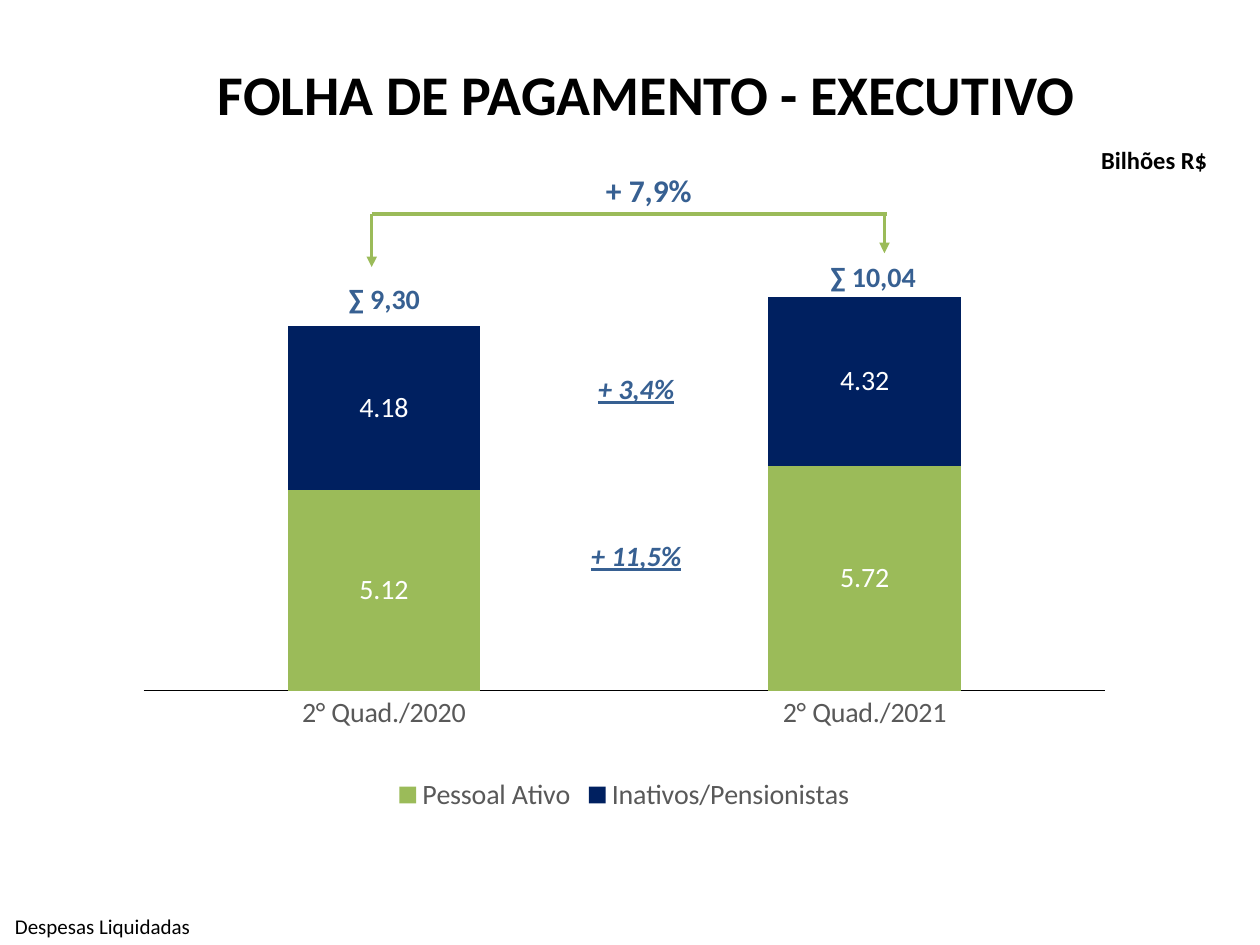
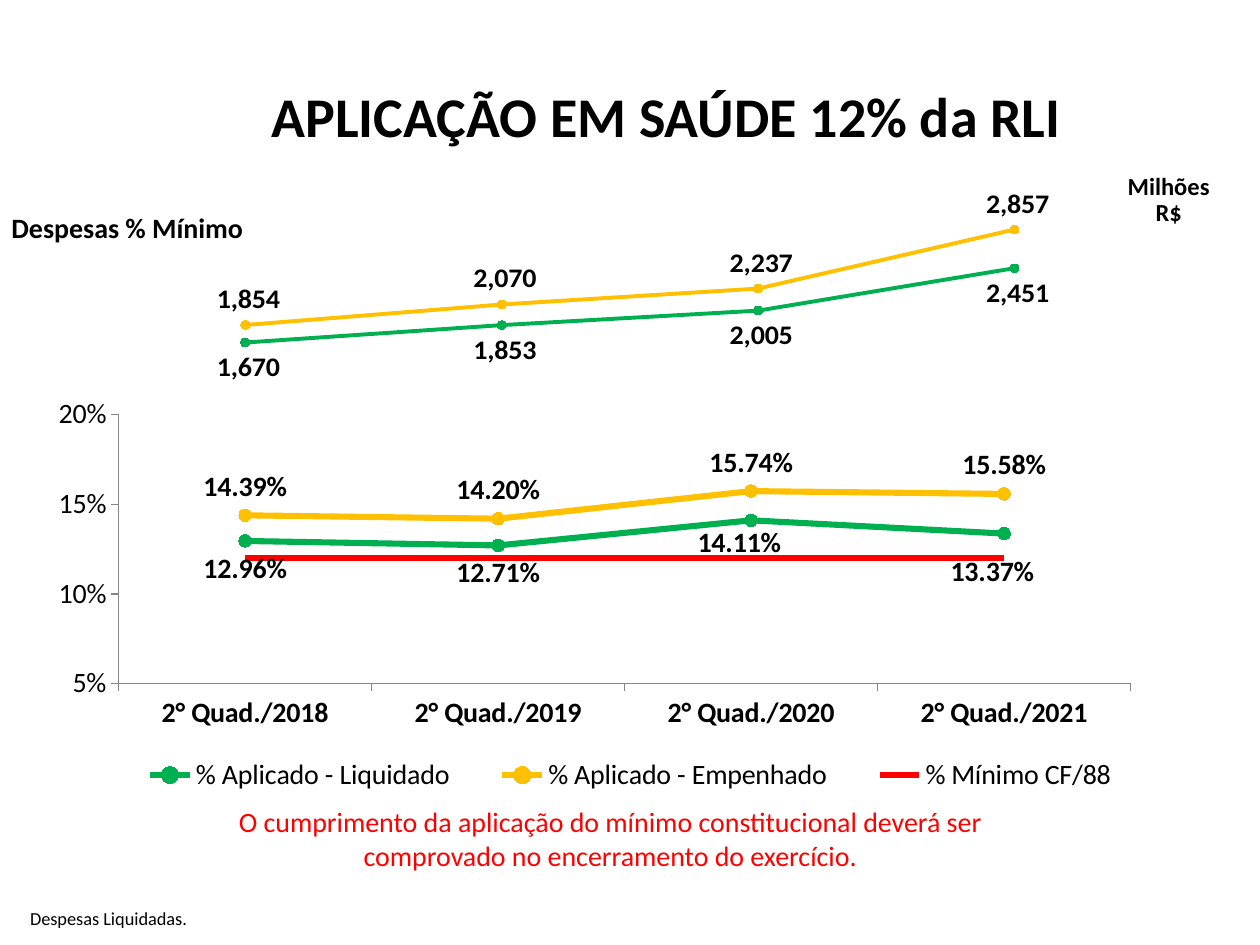
from lxml import etree
from pptx import Presentation
from pptx.chart.data import CategoryChartData
from pptx.dml.color import RGBColor
from pptx.enum.chart import (XL_CHART_TYPE, XL_LABEL_POSITION, XL_LEGEND_POSITION,
                             XL_MARKER_STYLE, XL_TICK_MARK)
from pptx.enum.shapes import MSO_CONNECTOR
from pptx.enum.text import MSO_ANCHOR, MSO_AUTO_SIZE, PP_ALIGN
from pptx.oxml import parse_xml
from pptx.oxml.ns import nsdecls, qn
from pptx.util import Inches, Pt

STACKED, LINES = XL_CHART_TYPE.COLUMN_STACKED, XL_CHART_TYPE.LINE_MARKERS
ABOVE, BELOW = XL_LABEL_POSITION.ABOVE, XL_LABEL_POSITION.BELOW
LEGEND_BOTTOM = XL_LEGEND_POSITION.BOTTOM
CIRCLE, NO_MARKER = XL_MARKER_STYLE.CIRCLE, XL_MARKER_STYLE.NONE
TICK_NONE, TICK_OUT = XL_TICK_MARK.NONE, XL_TICK_MARK.OUTSIDE
STRAIGHT = MSO_CONNECTOR.STRAIGHT
TOP, MIDDLE, BOTTOM = MSO_ANCHOR.TOP, MSO_ANCHOR.MIDDLE, MSO_ANCHOR.BOTTOM
NO_AUTOFIT = MSO_AUTO_SIZE.NONE
LEFT, CENTER = PP_ALIGN.LEFT, PP_ALIGN.CENTER

FONT = "Calibri"
BLACK = RGBColor(0x00, 0x00, 0x00)
WHITE = RGBColor(0xFF, 0xFF, 0xFF)
GRAY = RGBColor(0x59, 0x59, 0x59)
AXIS_GRAY = RGBColor(0x86, 0x86, 0x86)
BLUE = RGBColor(0x37, 0x60, 0x92)
NAVY = RGBColor(0x00, 0x20, 0x60)
OLIVE = RGBColor(0x9B, 0xBB, 0x59)
GREEN = RGBColor(0x00, 0xB0, 0x50)
AMBER = RGBColor(0xFF, 0xC0, 0x00)
RED = RGBColor(0xFF, 0x00, 0x00)


def style_font(font, size, color=BLACK, bold=False):
    """Apply the deck's typeface with a size, colour and weight."""
    font.name, font.size, font.bold = FONT, Pt(size), bold
    font.color.rgb = color


def set_insets(tf, left, top, right, bottom):
    """Set the four inner margins of a text frame in inches."""
    tf.margin_left, tf.margin_top = Inches(left), Inches(top)
    tf.margin_right, tf.margin_bottom = Inches(right), Inches(bottom)


def add_title(slide, text, box):
    """Place and format the slide title."""
    sp = slide.shapes.title
    sp.left, sp.top, sp.width, sp.height = map(Inches, box)
    tf = sp.text_frame
    tf.text = text
    tf.auto_size, tf.vertical_anchor = NO_AUTOFIT, TOP
    set_insets(tf, 0, 0.51, 0, 0)
    p = tf.paragraphs[0]
    p.alignment = CENTER
    p._p.get_or_add_pPr().set("marL", str(Inches(0.26)))
    style_font(p.font, 32, bold=True)


def add_text(slide, text, box, size, color=BLACK, bold=False, align=CENTER,
             anchor=TOP, insets=(0.1, 0.05, 0.1, 0.05), spacing=None):
    """Add a one-paragraph text box and return its paragraph."""
    tf = slide.shapes.add_textbox(*map(Inches, box)).text_frame
    tf.word_wrap, tf.vertical_anchor = True, anchor
    set_insets(tf, *insets)
    p = tf.paragraphs[0]
    p.text, p.alignment, p.line_spacing = text, align, spacing
    style_font(p.font, size, color, bold)
    return p


def add_caption(slide, text, box, size=14, anchor=TOP):
    """Add a bold tight caption for units or chart names."""
    add_text(slide, text, box, size, bold=True, anchor=anchor,
             insets=(0, 0, 0, 0), spacing=0.9)


def add_total(slide, text, left, top):
    """Add a column total above its bar."""
    add_text(slide, text, (left, top, 1, 0.27), 16, BLUE, True, anchor=BOTTOM,
             insets=(0.03, 0, 0.03, 0))


def add_growth(slide, text, top):
    """Add an underlined growth rate between the bars."""
    p = add_text(slide, text, (4.55, top, 1, 0.53), 16, BLUE, True, anchor=MIDDLE)
    p.font.italic = p.font.underline = True


def add_footnote(slide, text, left, top, size):
    """Add the note at the foot of the slide."""
    add_text(slide, text, (left, top, 9.81, 0.3), size, align=LEFT)


def add_line(slide, start, end, arrow=False):
    """Add an olive connector, optionally ending in an arrowhead."""
    cxn = slide.shapes.add_connector(STRAIGHT, *map(Inches, start + end))
    cxn.line.color.rgb, cxn.line.width = OLIVE, Pt(2)
    if arrow:
        etree.SubElement(cxn.line._get_or_add_ln(), qn("a:tailEnd"), type="triangle")
    etree.SubElement(cxn._element.spPr, qn("a:effectLst"))


def manual_layout(*sizes, edge=True, inner=False):
    """Return a manual chart layout from x, y and optional width, height."""
    parts = '<c:layoutTarget val="inner"/>' if inner else ""
    if edge:
        parts += '<c:xMode val="edge"/><c:yMode val="edge"/>'
    for tag, value in zip("xywh", sizes):
        parts += f'<c:{tag} val="{value}"/>'
    return parse_xml(f'<c:layout {nsdecls("c")}><c:manualLayout>{parts}'
                     '</c:manualLayout></c:layout>')


def drop_layout(element):
    """Remove an automatic layout from a chart part."""
    for old in element.findall(qn("c:layout")):
        element.remove(old)


def add_chart(slide, kind, box, cats, series, plot_area):
    """Add a transparent chart with a fixed plot area and no gridlines."""
    data = CategoryChartData()
    data.categories = cats
    for name, values in series:
        data.add_series(name, values)
    chart = slide.shapes.add_chart(kind, *map(Inches, box), data).chart
    chart.has_title = chart.has_legend = False
    style_font(chart.font, 16)
    chart.value_axis.has_major_gridlines = False
    chart.plots[0].vary_by_categories = False
    chart_el = chart._chartSpace.find(qn("c:chart"))
    chart_el.addnext(parse_xml(f'<c:spPr {nsdecls("c", "a")}><a:noFill/>'
                               '<a:ln><a:noFill/></a:ln></c:spPr>'))
    area = chart_el.find(qn("c:plotArea"))
    drop_layout(area)
    area.insert(0, manual_layout(*plot_area, inner=True))
    return chart


def set_scale(axis, low, high):
    """Fix the ends of a value axis."""
    axis.minimum_scale, axis.maximum_scale = low, high


def style_axis(axis, color, line, tick, bold=False):
    """Format an axis line, its ticks and its labels."""
    axis.major_tick_mark = tick
    axis.format.line.color.rgb, axis.format.line.width = line, Pt(0.75)
    style_font(axis.tick_labels.font, 16, color, bold)


def add_legend(chart, color, area=None):
    """Show the legend below the plot, optionally in a fixed area."""
    chart.has_legend = True
    chart.legend.position = LEGEND_BOTTOM
    chart.legend.include_in_layout = False
    style_font(chart.legend.font, 16, color)
    if area:
        legend = chart.legend._element
        drop_layout(legend)
        legend.find(qn("c:legendPos")).addnext(manual_layout(*area))


def add_labels(series, fmt, color=BLACK, bold=True, position=None):
    """Show the values of a series without leader lines."""
    labels = series.data_labels
    labels.show_value = True
    labels.number_format, labels.number_format_is_linked = fmt, False
    style_font(labels.font, 16, color, bold)
    if position is not None:
        labels.position = position
    for leader in labels._element.findall(qn("c:showLeaderLines")):
        leader.set("val", "0")


def shift_label(series, index, fmt, dx, dy):
    """Move one label below its point by fractions of the chart size."""
    label = series.points[index].data_label
    label.position = BELOW
    style_font(label.font, 16, bold=True)
    idx = series._element.find(f'.//{qn("c:dLbl")}/{qn("c:idx")}[@val="{index}"]')
    idx.addnext(parse_xml(f'<c:numFmt {nsdecls("c")} formatCode="{fmt}" sourceLinked="0"/>'))
    idx.addnext(manual_layout(dx, dy, edge=False))


def style_line(series, color, width, marker_size=None):
    """Format a straight line series and its markers."""
    series.smooth = False
    series.format.line.color.rgb, series.format.line.width = color, Pt(width)
    marker = series.marker
    marker.style = CIRCLE if marker_size else NO_MARKER
    if marker_size:
        marker.size = marker_size
        marker.format.fill.solid()
        marker.format.fill.fore_color.rgb = color
        marker.format.line.color.rgb = color


def build_payroll(slide):
    """Build the payroll slide."""
    chart = add_chart(slide, STACKED, (0.98, 1.7, 7.95, 4.79),
                      ["2° Quad./2020", "2° Quad./2021"],
                      [("Pessoal Ativo", (5.12, 5.72)),
                       ("Inativos/Pensionistas", (4.18, 4.32))],
                      (0.02, 0.01, 0.96, 0.78))
    plot = chart.plots[0]
    plot.gap_width, plot.overlap = 150, 100
    for series, color in zip(plot.series, (OLIVE, NAVY)):
        series.format.fill.solid()
        series.format.fill.fore_color.rgb = color
        add_labels(series, "#,##0.00", WHITE, bold=False)
    style_axis(chart.category_axis, GRAY, BLACK, TICK_NONE)
    set_scale(chart.value_axis, 0, 12)
    chart.value_axis.visible = False
    add_legend(chart, GRAY)

    add_title(slide, "FOLHA DE PAGAMENTO - EXECUTIVO", (0, -0.04, 10, 1.05))
    add_caption(slide, "Bilhões R$", (8.62, 1.18, 1.08, 0.21))
    add_total(slide, "∑ 9,30", 2.55, 2.23)
    add_total(slide, "∑ 10,04", 6.43, 2.06)
    add_line(slide, (2.95, 1.7), (2.95, 2.12), arrow=True)
    add_line(slide, (2.95, 1.7), (7.04, 1.7))
    add_line(slide, (7.02, 1.7), (7.02, 2.01), arrow=True)
    add_text(slide, "+ 7,9%", (4.76, 1.31, 1.1, 0.4), 18, BLUE, True, LEFT,
             insets=(0.05,) * 4)
    add_growth(slide, "+ 3,4%", 2.82)
    add_growth(slide, "+ 11,5%", 4.14)
    add_footnote(slide, "Despesas Liquidadas", 0.02, 7.2, 12)


def build_health(slide):
    """Build the health spending slide."""
    add_text(slide, "O cumprimento da aplicação do mínimo constitucional deverá ser "
             "comprovado no encerramento do exercício.", (1.46, 6.34, 6.77, 0.64), 16, RED)
    add_footnote(slide, "Despesas Liquidadas.", 0.14, 7.15, 10.5)
    add_title(slide, "APLICAÇÃO EM SAÚDE 12% da RLI", (0.16, 0.14, 10, 1.59))
    add_caption(slide, "Milhões R$", (8.85, 1.38, 0.85, 0.42))
    add_caption(slide, "Despesas % Mínimo", (0, 1.7, 2.02, 0.24), 16, MIDDLE)

    quads = [f"2° Quad./{year}" for year in range(2018, 2022)]
    colors, positions = (GREEN, AMBER, RED), (BELOW, ABOVE)
    shares = add_chart(slide, LINES, (0.28, 2.31, 9.45, 4.27), quads,
                       [("% Aplicado - Liquidado", (0.1296, 0.1271, 0.1411, 0.1337)),
                        ("% Aplicado - Empenhado", (0.1439, 0.142, 0.1574, 0.1558)),
                        ("% Mínimo CF/88", (0.12,) * 4)],
                       (0.07, 0.23, 0.85, 0.5))
    lines = list(shares.plots[0].series)
    for series, color, marker_size in zip(lines, colors, (7, 7, None)):
        style_line(series, color, 3.5, marker_size)
    for series, position in zip(lines, positions):
        add_labels(series, "0.00%", position=position)
    shift_label(lines[0], 2, "0.00%", -0.01, -0.01)
    shift_label(lines[0], 3, "0.00%", -0.01, 0.02)
    style_axis(shares.category_axis, BLACK, AXIS_GRAY, TICK_OUT, bold=True)
    axis = shares.value_axis
    style_axis(axis, BLACK, AXIS_GRAY, TICK_OUT)
    set_scale(axis, 0.05, 0.2)
    axis.major_unit = 0.05
    axis.tick_labels.number_format = "0%"
    axis.tick_labels.number_format_is_linked = False
    add_legend(shares, BLACK, (0.06, 0.86, 0.88, 0.08))

    amounts = add_chart(slide, LINES, (0.76, 1.49, 8.48, 1.77), quads,
                        [("Liquidado", (1670, 1853, 2005, 2451)),
                         ("Empenhado", (1854, 2070, 2237, 2857))],
                        (0.02, 0.09, 0.96, 0.89))
    for series, color, position in zip(amounts.plots[0].series, colors, positions):
        style_line(series, color, 2.25, 5)
        add_labels(series, "_-* #,##0_-", position=position)
    set_scale(amounts.value_axis, 1000, 3000)
    amounts.value_axis.visible = amounts.category_axis.visible = False


def main():
    """Build and save the deck."""
    prs = Presentation()
    prs.slide_width, prs.slide_height = Inches(10), Inches(7.5)
    for build in (build_payroll, build_health):
        build(prs.slides.add_slide(prs.slide_layouts[5]))
    prs.save("out.pptx")


if __name__ == "__main__":
    main()
